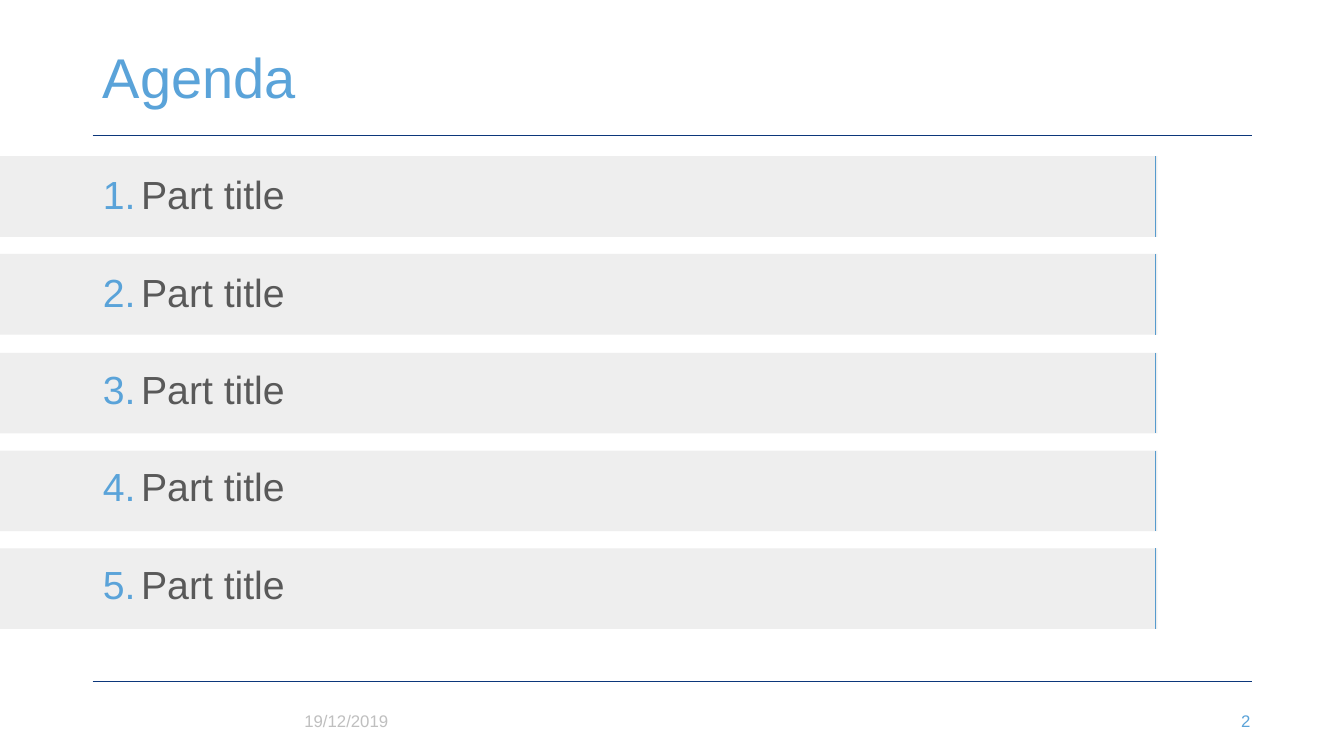
from dataclasses import dataclass
from lxml.etree import SubElement as Sub
from pptx import Presentation
from pptx.dml.color import RGBColor as RGB
from pptx.enum.shapes import MSO_CONNECTOR as Link, MSO_SHAPE as Form
from pptx.enum.text import MSO_ANCHOR as Anchor, MSO_AUTO_SIZE as Fit, PP_ALIGN as Align
from pptx.oxml.ns import qn
from pptx.util import Emu, Pt


@dataclass(frozen=True)
class Theme:
    """Colours and type sizes of the deck."""
    font: str = "Arial"
    blue: str = "5AA3D9"
    navy: str = "0C377B"
    edge: str = "569BCE"
    band: str = "EEEEEE"
    text: str = "595959"
    pale: str = "BFBFBF"
    head: int = 40
    body: int = 28
    foot: int = 12


LOOK = Theme()
SCALE = 9144


def px(n):
    """Turn px into EMU."""
    return Emu(n * SCALE)


def place(item, box):
    """Move an item to a box of px."""
    item.left, item.top, item.width, item.height = map(px, box)


def rule(slide, start, end, color, width):
    """Draw a plain line between two points."""
    line = slide.shapes.add_connector(Link.STRAIGHT, *map(px, start + end))
    line.line.color.rgb = RGB.from_string(color)
    line.line.width = Pt(width)
    Sub(line._element.spPr, qn("a:effectLst"))


def number(para, indent):
    """Give a paragraph an automatic blue number."""
    props = para._p.get_or_add_pPr()
    props.set("marL", str(px(indent)))
    props.set("indent", str(px(-indent)))
    Sub(Sub(props, qn("a:buClr")), qn("a:srgbClr"), val=LOOK.blue)
    Sub(props, qn("a:buFont"), typeface=LOOK.font)
    Sub(props, qn("a:buAutoNum"), type="arabicPeriod")


def write(item, *lines, size, color, align=Align.LEFT, anchor=Anchor.TOP,
          fit=Fit.NONE, space=1.0, after=0, indent=0):
    """Fill an item with formatted paragraphs."""
    frame = item.text_frame
    frame.word_wrap = True
    frame.auto_size = fit
    frame.vertical_anchor = anchor
    frame.text = "\n".join(lines)
    for para in frame.paragraphs:
        para.alignment = align
        para.line_spacing = space
        para.space_before = Pt(0)
        para.space_after = Pt(after)
        if indent:
            number(para, indent)
        font = para.runs[0].font
        font.name, font.size = LOOK.font, Pt(size)
        font.color.rgb = RGB.from_string(color)


def header(slide, box, title):
    """Place the title and the rule below it."""
    left, top, width, height = box
    place(slide.shapes.title, box)
    write(slide.shapes.title, title, size=LOOK.head, color=LOOK.blue, space=0.9)
    base = top + height + 8
    rule(slide, (left, base), (left + width, base), LOOK.navy, 0.5)


def agenda(slide, box, parts):
    """Place one band per part and the numbered list over them."""
    left, top, width, height = box
    band = 80
    step = (height - band) / (len(parts) - 1)
    for i in range(len(parts)):
        y = round(top + i * step)
        bar = slide.shapes.add_shape(Form.RECTANGLE, *map(px, (left, y, width, band)))
        bar.shadow.inherit = False
        bar.fill.solid()
        bar.fill.fore_color.rgb = RGB.from_string(LOOK.band)
        bar.line.fill.background()
        edge = left + width - 2
        rule(slide, (edge, y), (edge, y + band), LOOK.edge, 0.75)
    body = slide.placeholders[1]
    place(body, (left + 92, top + 9, 1077, 448))
    write(body, *parts, size=LOOK.body, color=LOOK.text, fit=Fit.SHAPE_TO_FIT_TEXT,
          after=36, indent=38)
    slide.shapes._spTree.append(body._element)


def footer(slide, box, date, page):
    """Place the bottom rule, the date and the page number."""
    left, top, width, height = box
    rule(slide, (left, top), (left + width, top), LOOK.navy, 0.5)
    y, tall = top + 19, height - 19
    for text, x, wide, color, align in (
            (date, left + 200, 120, LOOK.pale, Align.LEFT),
            (page, left + width - 65, 73, LOOK.blue, Align.RIGHT)):
        note = slide.shapes.add_textbox(*map(px, (x, y, wide, tall)))
        write(note, text, size=LOOK.foot, color=color, align=align, anchor=Anchor.MIDDLE)


def main():
    """Build and save the slide."""
    deck = Presentation()
    deck.slide_width, deck.slide_height = px(1333), px(750)
    slide = deck.slides.add_slide(deck.slide_layouts[1])
    header(slide, (92, 45, 1150, 81), "Agenda")
    agenda(slide, (0, 155, 1148, 469), ["Part title"] * 5)
    footer(slide, (92, 676, 1150, 59), "19/12/2019", "2")
    deck.save("out.pptx")


if __name__ == "__main__":
    main()
